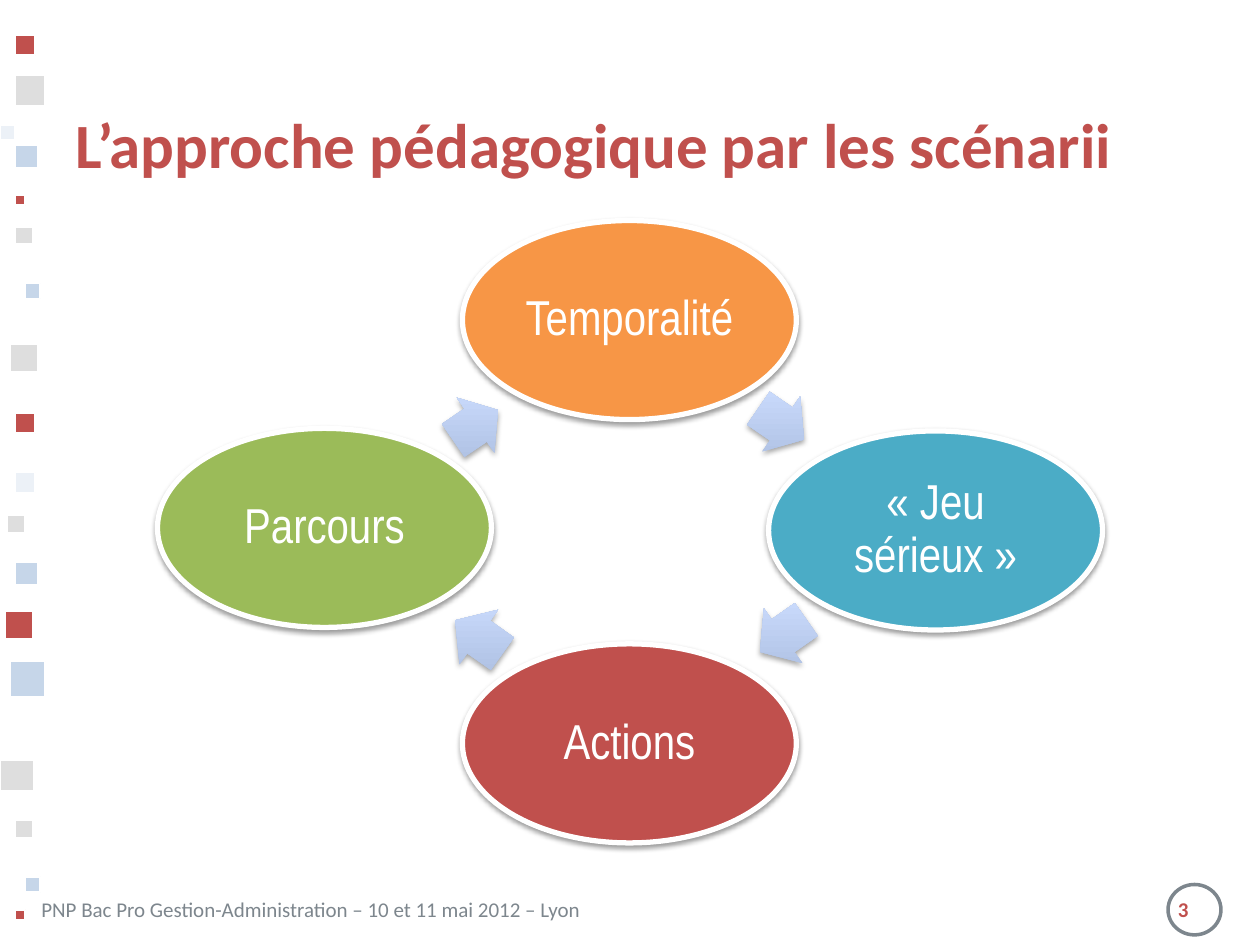
from lxml.etree import SubElement
from pptx import Presentation
from pptx.dml.color import RGBColor
from pptx.enum.shapes import MSO_SHAPE
from pptx.enum.text import MSO_ANCHOR, PP_ALIGN
from pptx.oxml.ns import qn
from pptx.util import Pt

PX = 9144  # 100 px to the inch
COLORS = {
    "white": "FFFFFF", "slate": "7D868D", "red": "C0504D", "grey": "BFBFBF",
    "blue": "B8CCE4", "pale": "DBE5F1", "orange": "F79646", "teal": "4BACC6",
    "green": "9BBB59", "arrow_dark": "ADBFE1", "arrow_light": "CCDDFF", "black": "000000",
}
OPACITY = {"red": 100, "grey": 50, "blue": 80, "pale": 50}


def write_text(frame, *spans, size, font, align=PP_ALIGN.LEFT,
               anchor=MSO_ANCHOR.TOP, spacing=1.0, inset=None):
    """Fill the frame with one paragraph of (text, color, bold) spans."""
    frame.word_wrap = True
    frame.vertical_anchor = anchor
    if inset is not None:
        frame.margin_left = frame.margin_right = inset * PX
        frame.margin_top = frame.margin_bottom = inset * PX
    para = frame.paragraphs[0]
    para.alignment = align
    para.line_spacing = spacing
    for text, color, bold in spans:
        span = para.add_run()
        span.text = text
        span.font.size = Pt(size)
        span.font.name = font
        span.font.bold = bold
        span.font.color.rgb = RGBColor.from_string(COLORS[color])
    return para


def draw_shape(kind, left, top, width, height, fill=None, line=None, weight=1, shadow=None):
    """Add a preset shape; shadow is (opacity in percent, distance in points)."""
    shape = page.shapes.add_shape(kind, left * PX, top * PX, width * PX, height * PX)
    shape.shadow.inherit = False
    if fill:
        shape.fill.solid()
        shape.fill.fore_color.rgb = RGBColor.from_string(COLORS[fill])
    else:
        shape.fill.background()
    if line:
        shape.line.color.rgb = RGBColor.from_string(COLORS[line])
        shape.line.width = Pt(weight)
    else:
        shape.line.fill.background()
    if shadow:
        opacity, distance = shadow
        effects = shape._element.spPr.find(qn("a:effectLst"))
        outer = SubElement(effects, qn("a:outerShdw"), blurRad=str(Pt(3.1)),
                           dist=str(Pt(distance)), dir="5400000", rotWithShape="0")
        shade = SubElement(outer, qn("a:srgbClr"), val=COLORS["black"])
        SubElement(shade, qn("a:alpha"), val=str(opacity * 1000))
    return shape


deck = Presentation()
deck.slide_width, deck.slide_height = 1000 * PX, 750 * PX
page = deck.slides.add_slide(deck.slide_layouts[6])

# Footer, with the page number at a tab stop
box = page.shapes.add_textbox(23 * PX, 707 * PX, 958 * PX, 30 * PX)
para = write_text(box.text_frame,
                  ("PNP Bac Pro Gestion-Administration – 10 et 11 mai 2012 – Lyon \t", "slate", False),
                  ("3", "red", True), size=12, font="Calibri")
tabs = SubElement(para._p.get_or_add_pPr(), qn("a:tabLst"))
SubElement(tabs, qn("a:tab"), pos=str(902 * PX), algn="l")
draw_shape(MSO_SHAPE.OVAL, 927, 702, 42, 40, line="slate", weight=2)

# Column of squares on the left edge: color, left, top, width, height
squares = [
    ("red", 12, 28, 16, 16), ("grey", 12, 60, 24, 24), ("pale", 0, 99, 12, 12),
    ("blue", 12, 115, 18, 18), ("red", 12, 155, 8, 8), ("grey", 12, 180, 14, 14),
    ("blue", 20, 225, 12, 12), ("grey", 8, 273, 22, 22), ("red", 12, 328, 16, 16),
    ("pale", 12, 375, 16, 16), ("grey", 6, 409, 14, 14), ("blue", 12, 446, 18, 18),
    ("red", 4, 485, 22, 22), ("blue", 8, 525, 28, 28), ("grey", 0, 603, 27, 25),
    ("grey", 12, 651, 14, 14), ("blue", 20, 696, 12, 12), ("red", 12, 722, 8, 8),
]
for color, *place in squares:
    square = draw_shape(MSO_SHAPE.RECTANGLE, *place, fill=color, line="white")
    if OPACITY[color] < 100:
        tint = square._element.spPr.find(qn("a:solidFill")).find(qn("a:srgbClr"))
        SubElement(tint, qn("a:alpha"), val=str(OPACITY[color] * 1000))

# Title
box = page.shapes.add_textbox(50 * PX, 69 * PX, 900 * PX, 90 * PX)
write_text(box.text_frame, ("L’approche pédagogique par les scénarii", "red", True),
           size=36, font="Calibri", anchor=MSO_ANCHOR.MIDDLE)

# Cycle: each step, then the arrow that leaves it (left, top, width, rotation)
cycle = [
    ("Temporalité", "orange", 367, 175, (598, 310, 44, 34.5)),
    ("« Jeu sérieux »", "teal", 610, 342, (599, 478, 45, 145)),
    ("Actions", "red", 367, 511, (357, 479, 46, 215.3)),
    ("Parcours", "green", 125, 340, (356, 311, 43, 325.7)),
]
for label, color, left, top, (arrow_left, arrow_top, arrow_width, rotation) in cycle:
    step = draw_shape(MSO_SHAPE.OVAL, left, top, 265, 158, fill=color,
                      line="white", weight=3, shadow=(38, 1.6))
    write_text(step.text_frame, (label, "white", False), size=28, font="Arial Narrow",
               align=PP_ALIGN.CENTER, anchor=MSO_ANCHOR.MIDDLE, spacing=0.9, inset=4)

    arrow = draw_shape(MSO_SHAPE.RIGHT_ARROW, arrow_left, arrow_top, arrow_width, 53,
                       shadow=(35, 1.8))
    arrow.adjustments[0], arrow.adjustments[1] = 0.6, 0.5
    arrow.rotation = rotation
    arrow.fill.gradient()
    arrow.fill.gradient_angle = 90
    for stop, shade in zip(arrow.fill.gradient_stops, ("arrow_dark", "arrow_light")):
        stop.color.rgb = RGBColor.from_string(COLORS[shade])
    arrow._element.spPr.find(qn("a:gradFill")).set("rotWithShape", "0")

deck.save("out.pptx")
